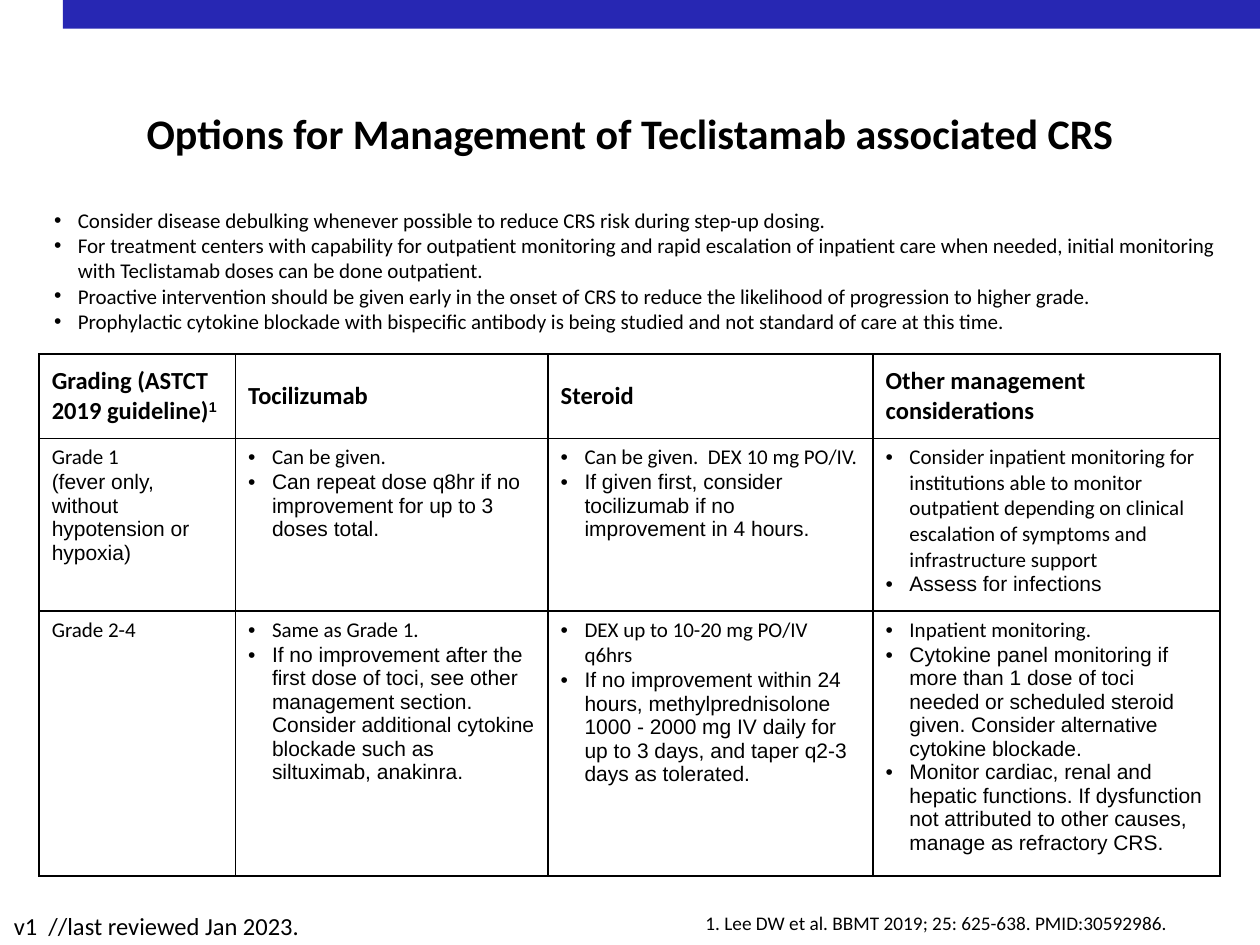
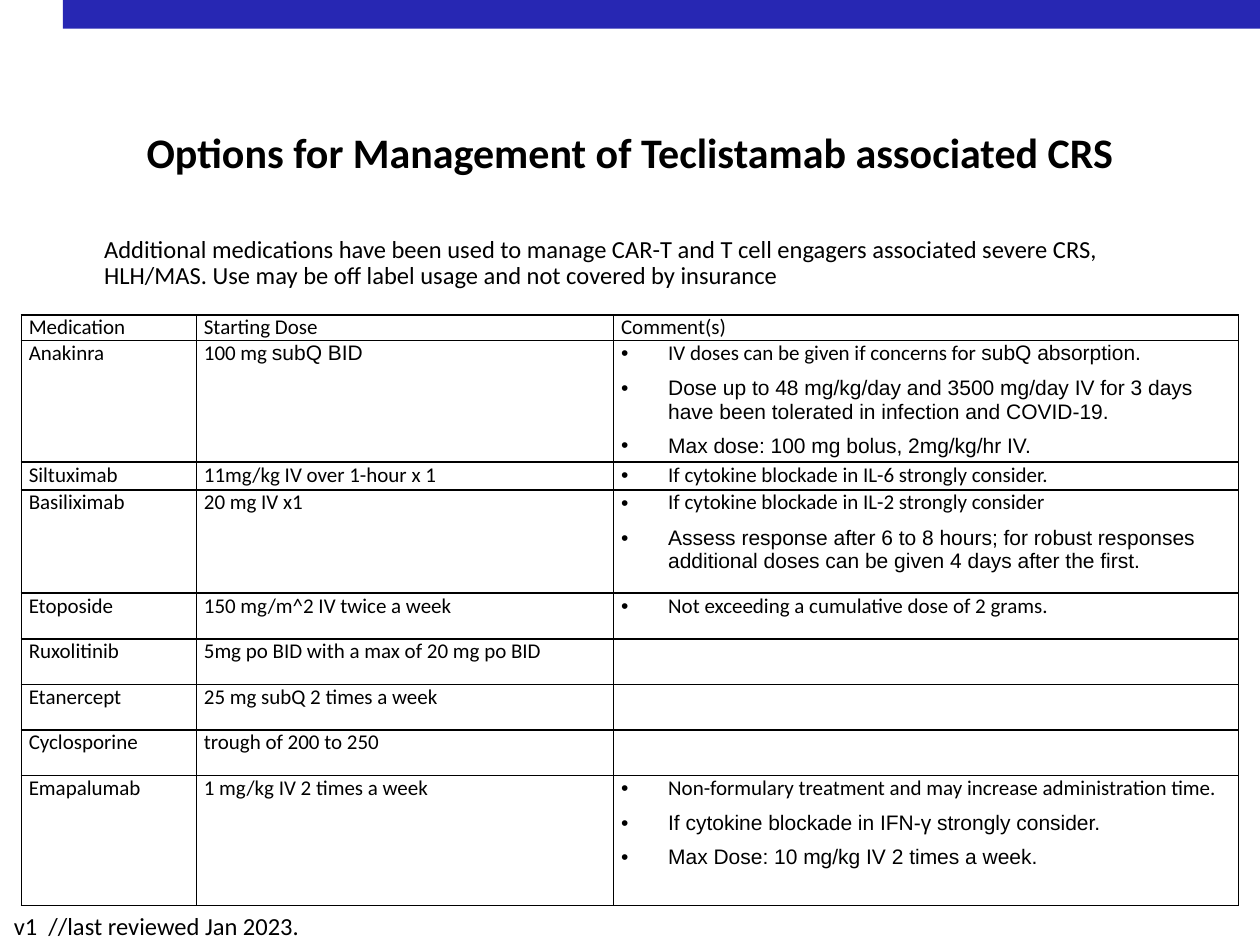
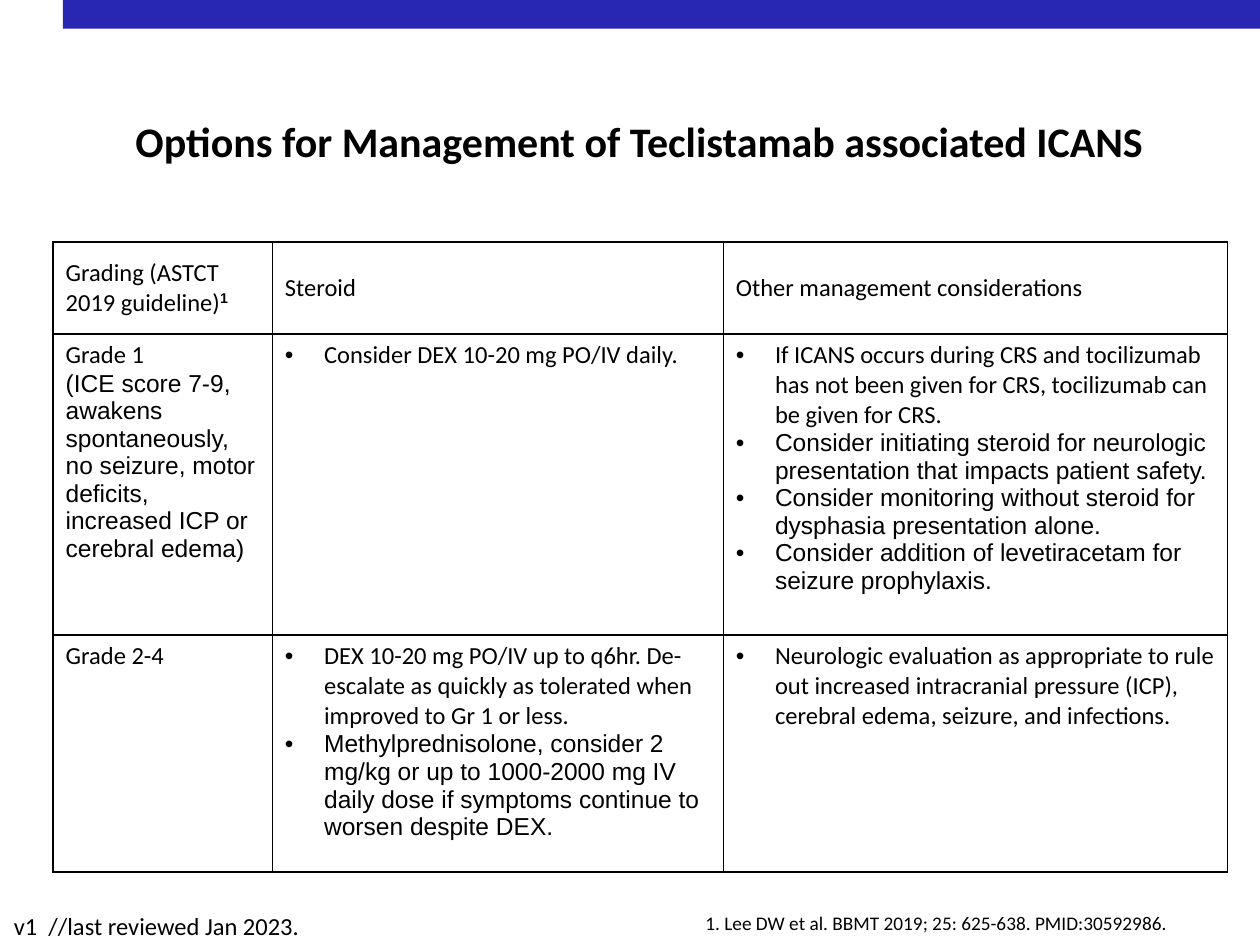
from lxml import etree
from pptx import Presentation
from pptx.dml.color import RGBColor
from pptx.enum.shapes import MSO_SHAPE
from pptx.enum.text import MSO_ANCHOR, PP_ALIGN
from pptx.oxml.ns import qn
from pptx.util import Cm, Pt

RECT = MSO_SHAPE.RECTANGLE
MIDDLE = MSO_ANCHOR.MIDDLE
LEFT, CENTER = PP_ALIGN.LEFT, PP_ALIGN.CENTER

COLORS = {"band": "2727B3", "text": "000000", "border": "000000"}
MAIN_FONT, ALT_FONT = "Calibri", "Arial"
CITATION = "1. Lee DW et al. BBMT 2019; 25: 625-638. PMID:30592986."
GRADING = [("Grading (ASTCT 2019 guideline)", "1")]

# A cell is a string or a list of paragraphs; a paragraph is a string or a tuple of runs.
CRS_ROWS = [
    [GRADING, "Tocilizumab", "Steroid", "Other management considerations"],
    [["Grade 1", "(fever only, without hypotension or hypoxia)"],
     ["Can be given.",
      "Can repeat dose q8hr if no improvement for up to 3 doses total."],
     ["Can be given.  DEX 10 mg PO/IV.",
      "If given first, consider tocilizumab if no improvement in 4 hours."],
     ["Consider inpatient monitoring for institutions able to monitor outpatient "
      "depending on clinical escalation of symptoms and infrastructure support",
      "Assess for infections"]],
    ["Grade 2-4",
     ["Same as Grade 1.",
      "If no improvement after the first dose of toci, see other management section. "
      "Consider additional cytokine blockade such as siltuximab, anakinra."],
     ["DEX up to 10-20 mg PO/IV q6hrs",
      "If no improvement within 24 hours, methylprednisolone 1000 - 2000 mg IV daily "
      "for up to 3 days, and taper q2-3 days as tolerated."],
     ["Inpatient monitoring.",
      "Cytokine panel monitoring if more than 1 dose of toci needed or scheduled "
      "steroid given. Consider alternative cytokine blockade.",
      "Monitor cardiac, renal and hepatic functions. If dysfunction not attributed to "
      "other causes, manage as refractory CRS."]],
]

MEDICATION_ROWS = [
    ["Medication", "Starting Dose", "Comment(s)"],
    ["Anakinra", [("100 mg ", "subQ BID")],
     [("IV doses can be given if concerns for ", "subQ absorption."),
      "Dose up to 48 mg/kg/day and 3500 mg/day IV for 3 days have been tolerated in "
      "infection and COVID-19.",
      "Max dose: 100 mg bolus, 2mg/kg/hr IV."]],
    ["Siltuximab", "11mg/kg IV over 1-hour x 1",
     "If cytokine blockade in IL-6 strongly consider."],
    ["Basiliximab", "20 mg IV x1",
     ["If cytokine blockade in IL-2 strongly consider",
      "Assess response after 6 to 8 hours; for robust responses additional doses can "
      "be given 4 days after the first."]],
    ["Etoposide", "150 mg/m^2 IV twice a week",
     "Not exceeding a cumulative dose of 2 grams."],
    ["Ruxolitinib", "5mg po BID with a max of 20 mg po BID", []],
    ["Etanercept", "25 mg subQ 2 times a week", []],
    ["Cyclosporine", "trough of 200 to 250", []],
    ["Emapalumab", "1 mg/kg IV 2 times a week",
     ["Non-formulary treatment and may increase administration time.",
      "If cytokine blockade in IFN-γ strongly consider.",
      "Max Dose: 10 mg/kg IV 2 times a week."]],
]

ICANS_ROWS = [
    [GRADING, "Steroid", "Other management considerations"],
    [["Grade 1",
      "(ICE score 7-9, awakens spontaneously, no seizure, motor deficits, increased "
      "ICP or cerebral edema)"],
     "Consider DEX 10-20 mg PO/IV daily.",
     ["If ICANS occurs during CRS and tocilizumab has not been given for CRS, "
      "tocilizumab can be given for CRS.",
      "Consider initiating steroid for neurologic presentation that impacts patient "
      "safety.",
      "Consider monitoring without steroid for dysphasia presentation alone.",
      "Consider addition of levetiracetam for seizure prophylaxis."]],
    ["Grade 2-4",
     ["DEX 10-20 mg PO/IV up to q6hr. De-escalate as quickly as tolerated when "
      "improved to Gr 1 or less.",
      "Methylprednisolone, consider 2 mg/kg or up to 1000-2000 mg IV daily dose if "
      "symptoms continue to worsen despite DEX."],
     "Neurologic evaluation as appropriate to rule out increased intracranial pressure "
     "(ICP), cerebral edema, seizure, and infections."],
]

CRS_ADVICE = [
    "Consider disease debulking whenever possible to reduce CRS risk during step-up "
    "dosing.",
    "For treatment centers with capability for outpatient monitoring and rapid "
    "escalation of inpatient care when needed, initial monitoring with Teclistamab "
    "doses can be done outpatient.",
    "Proactive intervention should be given early in the onset of CRS to reduce the "
    "likelihood of progression to higher grade.",
    "Prophylactic cytokine blockade with bispecific antibody is being studied and not "
    "standard of care at this time.",
]


class Deck:
    def __init__(self):
        self.prs = Presentation()
        self.prs.slide_width, self.prs.slide_height = Cm(25.4), Cm(19.05)
        self.s = None

    def new_slide(self):
        self.s = self.prs.slides.add_slide(self.prs.slide_layouts[6])
        sp = self.s.shapes.add_shape(RECT, Cm(1.27), 0, Cm(24.13), Cm(0.58))
        sp.shadow.inherit = False
        sp.fill.solid()
        sp.fill.fore_color.rgb = RGBColor.from_string(COLORS["band"])
        sp.line.fill.background()
        self.text(["v1  //last reviewed Jan 2023."], 0.03, 18.24, 6.43, 0.86, 14,
                  wrap=False)

    def run(self, p, text, size, font=MAIN_FONT, bold=False):
        r = p.add_run()
        r.text = text
        r.font.name, r.font.size, r.font.bold = font, Pt(size), bold
        r.font.color.rgb = RGBColor.from_string(COLORS["text"])
        return r

    def bullet(self, p, indent):
        pPr = p._p.get_or_add_pPr()
        pPr.set("marL", str(Cm(indent)))
        pPr.set("indent", str(-Cm(indent)))
        etree.SubElement(pPr, qn("a:buFont")).set("typeface", ALT_FONT)
        etree.SubElement(pPr, qn("a:buChar")).set("char", "•")

    def text(self, paragraphs, x, y, w, h, size, bold=False, align=LEFT, spacing=None,
             indent=None, wrap=True):
        tf = self.s.shapes.add_textbox(Cm(x), Cm(y), Cm(w), Cm(h)).text_frame
        tf.word_wrap = wrap
        for i, text in enumerate(paragraphs):
            p = tf.add_paragraph() if i else tf.paragraphs[0]
            if indent:
                self.bullet(p, indent)
            p.alignment, p.line_spacing = align, spacing
            self.run(p, text, size, bold=bold)

    def title(self, text, y, x=1.9, w=21.6):
        self.text([text], x, y, w, 1.9, 24, bold=True, align=CENTER, spacing=0.9)

    def citation(self):
        self.text([CITATION], 13.97, 18.24, 9.93, 0.74, 11, wrap=False)

    def borders(self, cell):
        tcPr = cell._tc.get_or_add_tcPr()
        for side in ("lnL", "lnR", "lnT", "lnB"):
            ln = etree.SubElement(tcPr, qn(f"a:{side}"), w=str(Pt(1)))
            fill = etree.SubElement(ln, qn("a:solidFill"))
            etree.SubElement(fill, qn("a:srgbClr"), val=COLORS["border"])

    def fill_cell(self, cell, content, size, bold, is_head, indent, after):
        """The first run of a cell is in the main font, all later ones in the other."""
        tf = cell.text_frame
        font = MAIN_FONT
        for i, runs in enumerate([content] if isinstance(content, str) else content):
            p = tf.add_paragraph() if i else tf.paragraphs[0]
            if indent:
                self.bullet(p, indent)
            if after:
                p.space_after = Pt(after)
            for text in (runs,) if isinstance(runs, str) else runs:
                is_note = is_head and font == ALT_FONT
                r = self.run(p, text, size, font, bold or is_note)
                if is_note:
                    r.font._element.set("baseline", "30000")
                font = ALT_FONT

    def table(self, rows, x, y, widths, heights, size, indent, bullets_from=1,
              head_size=None, head_bold=False, tight=False):
        table = self.s.shapes.add_table(len(rows), len(widths), Cm(x), Cm(y),
                                        Cm(sum(widths)), Cm(sum(heights))).table
        table.first_row = table.horz_banding = False
        for col, width in zip(table.columns, widths):
            col.width = Cm(width)
        for i, (row, height) in enumerate(zip(rows, heights)):
            table.rows[i].height = Cm(height)
            is_head = i == 0
            for j, content in enumerate(row):
                cell = table.cell(i, j)
                self.borders(cell)
                cell.fill.background()
                if is_head:
                    cell.vertical_anchor = MIDDLE
                if tight:
                    cell.margin_left = cell.margin_right = Cm(0.15)
                    cell.margin_top = cell.margin_bottom = 0
                has_bullets = not is_head and j >= bullets_from
                self.fill_cell(cell, content, head_size or size if is_head else size,
                               is_head and head_bold, is_head,
                               indent if has_bullets else None, 6 if tight else None)


def main():
    deck = Deck()

    deck.new_slide()
    deck.title("Options for Management of Teclistamab associated CRS", 2.16)
    deck.table(CRS_ROWS, 0.79, 7.14, [3.96, 6.3, 6.55, 6.99], [1.7, 3.48, 5.33],
               12, 0.48, head_size=14, head_bold=True)
    deck.text(CRS_ADVICE, 0.84, 4.06, 24.13, 2.82, 12, indent=0.48)
    deck.citation()

    deck.new_slide()
    deck.title("Options for Management of Teclistamab associated CRS", 2.54)
    deck.text(["Additional medications have been used to manage CAR-T and T cell "
               "engagers associated severe CRS, HLH/MAS. Use may be off label usage and "
               "not covered by insurance"], 1.85, 4.65, 21.6, 1.27, 14, spacing=0.9)
    deck.table(MEDICATION_ROWS, 0.43, 6.35, [3.53, 8.41, 12.6],
               [0.51, 2.36, 0.56, 2.08] + [0.92] * 4 + [2.62],
               12, 0.95, bullets_from=2, tight=True)

    deck.new_slide()
    deck.title("Options for Management of Teclistamab associated ICANS", 2.31, 1.78, 22.22)
    deck.table(ICANS_ROWS, 1.07, 4.88, [4.42, 9.09, 10.16], [1.85, 6.07, 4.78], 14, 0.79)
    deck.citation()

    deck.prs.save("out.pptx")


if __name__ == "__main__":
    main()
